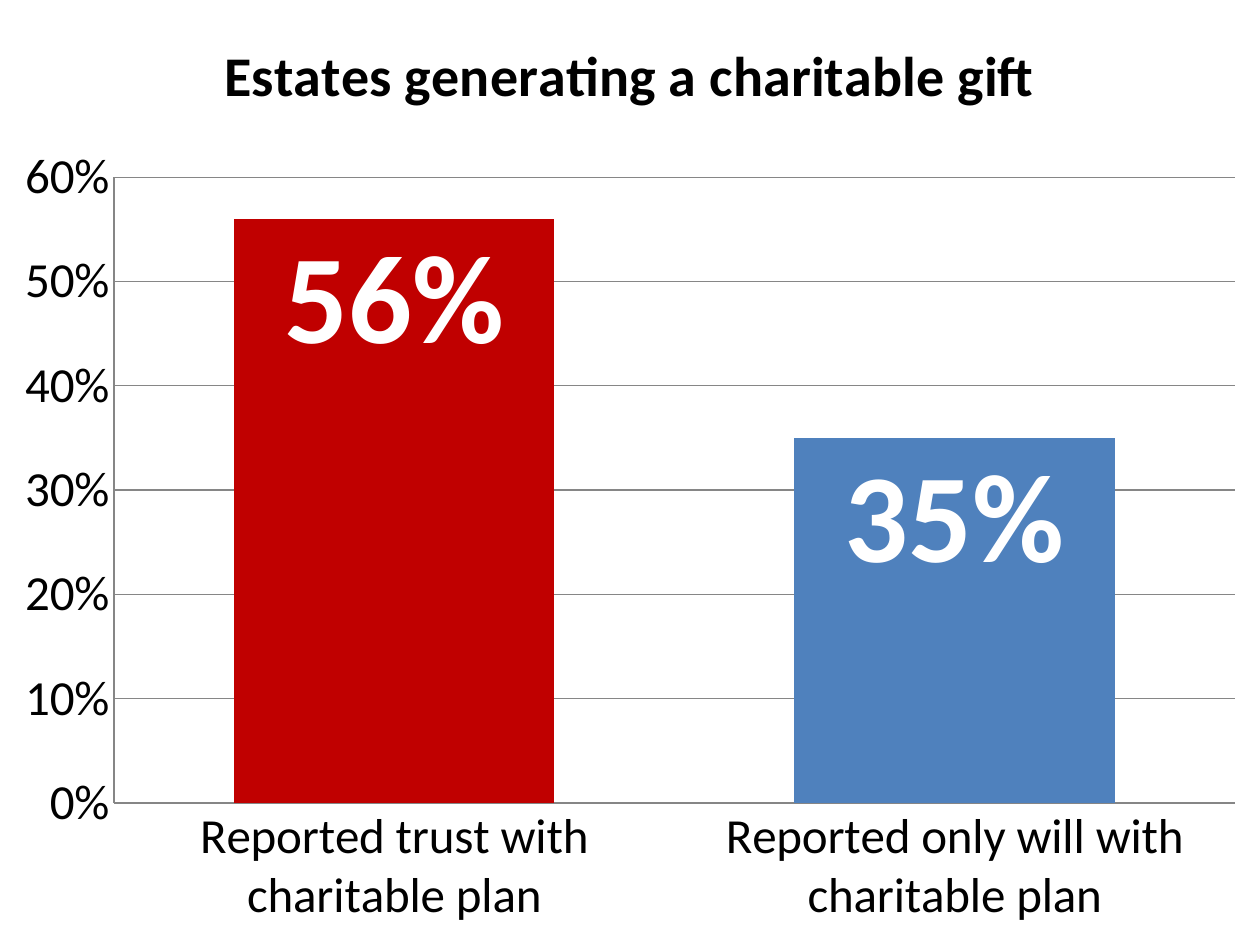
from dataclasses import dataclass

from pptx import Presentation
from pptx.chart.axis import _BaseAxis
from pptx.chart.chart import Chart
from pptx.chart.data import CategoryChartData
from pptx.dml.color import RGBColor
from pptx.enum.chart import XL_CHART_TYPE, XL_LABEL_POSITION, XL_TICK_MARK
from pptx.text.text import Font
from pptx.util import Inches, Pt

COLORS = {
    "text": "000000",
    "label": "FFFFFF",
    "line": "868686",
    "trust": "C00000",
    "will": "4F81BD",
}
FONT_NAME = "Calibri"
TITLE = "Estates generating a charitable gift"
PERCENT = "0%"


@dataclass(frozen=True)
class Bar:
    category: str
    share: float
    color: str


BARS = [
    Bar("Reported trust with charitable plan", 0.56, "trust"),
    Bar("Reported only will with charitable plan", 0.35, "will"),
]


def rgb(name: str) -> RGBColor:
    return RGBColor.from_string(COLORS[name])


def format_font(font: Font, size: float, color: str, bold: bool = False) -> None:
    font.name = FONT_NAME
    font.size = Pt(size)
    font.bold = bold
    font.color.rgb = rgb(color)


def format_axis(axis: _BaseAxis) -> None:
    axis.major_tick_mark = XL_TICK_MARK.NONE
    axis.minor_tick_mark = XL_TICK_MARK.NONE
    axis.format.line.color.rgb = rgb("line")
    axis.format.line.width = Pt(0.75)
    format_font(axis.tick_labels.font, 28, "text")


def format_title(chart: Chart) -> None:
    chart.has_title = True
    chart.chart_title.include_in_layout = False
    frame = chart.chart_title.text_frame
    frame.text = TITLE
    format_font(frame.paragraphs[0].runs[0].font, 32, "text", bold=True)


def format_bars(chart: Chart) -> None:
    plot = chart.plots[0]
    plot.gap_width = 75
    plot.overlap = 40
    plot.vary_by_categories = False
    series = plot.series[0]
    series.format.fill.solid()
    series.format.fill.fore_color.rgb = rgb("will")
    for index, bar in enumerate(BARS):
        fill = series.points[index].format.fill
        fill.solid()
        fill.fore_color.rgb = rgb(bar.color)
    labels = series.data_labels
    labels.show_value = True
    labels.position = XL_LABEL_POSITION.INSIDE_END
    labels.number_format = PERCENT
    labels.number_format_is_linked = False
    format_font(labels.font, 72, "label", bold=True)


def main() -> None:
    deck = Presentation()
    deck.slide_width = Inches(10)
    deck.slide_height = Inches(7.5)
    page = deck.slides.add_slide(deck.slide_layouts[6])

    data = CategoryChartData(number_format=PERCENT)
    data.categories = [bar.category for bar in BARS]
    data.add_series(TITLE, [bar.share for bar in BARS])
    chart = page.shapes.add_chart(
        XL_CHART_TYPE.COLUMN_CLUSTERED,
        Inches(0), Inches(0), deck.slide_width, deck.slide_height, data,
    ).chart
    chart.has_legend = False
    format_font(chart.font, 10, "text")
    format_title(chart)
    format_bars(chart)

    format_axis(chart.category_axis)
    values = chart.value_axis
    format_axis(values)
    values.minimum_scale = 0
    values.maximum_scale = 0.6
    values.major_unit = 0.1
    values.tick_labels.number_format = PERCENT
    values.tick_labels.number_format_is_linked = False
    values.has_major_gridlines = True
    values.major_gridlines.format.line.color.rgb = rgb("line")
    values.major_gridlines.format.line.width = Pt(0.75)

    deck.save("out.pptx")


if __name__ == "__main__":
    main()
